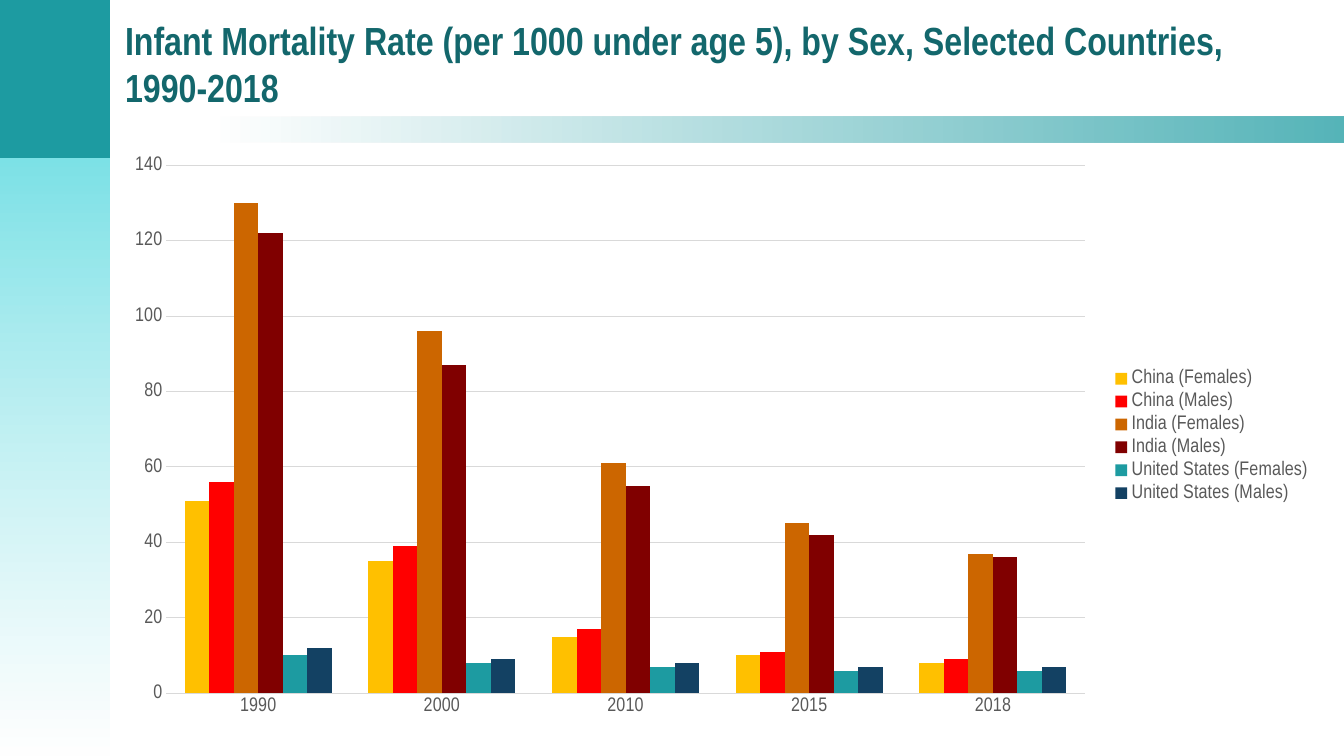
"""Build a slide comparing infant mortality by sex in three countries."""
from lxml.etree import SubElement
from pptx import Presentation
from pptx.chart.data import CategoryChartData
from pptx.dml.color import RGBColor
from pptx.enum.chart import XL_CHART_TYPE, XL_LEGEND_POSITION, XL_TICK_MARK
from pptx.enum.shapes import MSO_SHAPE
from pptx.enum.text import MSO_ANCHOR, MSO_AUTO_SIZE, PP_ALIGN
from pptx.oxml.ns import qn
from pptx.util import Pt

TITLE = "Infant Mortality Rate (per 1000 under age 5), by Sex, Selected Countries, 1990-2018"
YEARS = ["1990", "2000", "2010", "2015", "2018"]
RATES = [
    ("China (Females)", "gold", (51, 35, 15, 10, 8)),
    ("China (Males)", "red", (56, 39, 17, 11, 9)),
    ("India (Females)", "orange", (130, 96, 61, 45, 37)),
    ("India (Males)", "maroon", (122, 87, 55, 42, 36)),
    ("United States (Females)", "teal", (10, 8, 7, 6, 6)),
    ("United States (Males)", "navy", (12, 9, 8, 7, 7)),
]
COLORS = {
    "gold": "FFC000", "red": "FF0000", "orange": "CC6600", "maroon": "800000",
    "teal": "1D9BA1", "navy": "134163", "aqua": "7DE2E7", "white": "FFFFFF",
    "title": "13676C", "label": "595959", "grid": "D9D9D9",
}
BANDS = [
    ((-2, -1, 111, 158), [("teal", 100)], 0),
    ((-2, 157, 111, 593), [("aqua", 100), ("white", 75)], 270),
    ((209, 116, 1125, 25), [("white", 75), ("teal", 75)], 0),
]
TITLE_BOX = (114, 11, 1197, 104)
CHART_BOX = (110, 143, 1202, 579)
PX = 9144
FONT = "Arial Narrow"


def emu(box):
    return [side * PX for side in box]


def rgb(name):
    return RGBColor.from_string(COLORS[name])


def apply(item, **look):
    for key, value in look.items():
        setattr(item, key, value)


def style(font, size, color, bold=False):
    apply(font, name=FONT, size=Pt(size), bold=bold)
    font.color.rgb = rgb(color)


def rule(line):
    line.color.rgb = rgb("grid")
    line.width = Pt(0.75)


def add_band(slide, box, stops, angle):
    band = slide.shapes.add_shape(MSO_SHAPE.RECTANGLE, *emu(box))
    band.shadow.inherit = False
    band.line.fill.background()
    if len(stops) == 1:
        band.fill.solid()
        band.fill.fore_color.rgb = rgb(stops[0][0])
        return
    band.fill.gradient()
    band.fill.gradient_angle = angle
    for stop, (color, _) in zip(band.fill.gradient_stops, stops):
        stop.color.rgb = rgb(color)
    tints = band._element.spPr.iter(qn("a:srgbClr"))
    for tint, (_, alpha) in zip(tints, stops):
        if alpha < 100:
            SubElement(tint, qn("a:alpha")).set("val", str(alpha * 1000))


def add_title(slide):
    title = slide.shapes.title
    apply(title, **dict(zip(("left", "top", "width", "height"), emu(TITLE_BOX))))
    frame = title.text_frame
    frame.text = TITLE
    apply(frame, word_wrap=True, auto_size=MSO_AUTO_SIZE.NONE,
          vertical_anchor=MSO_ANCHOR.MIDDLE)
    para = frame.paragraphs[0]
    para.alignment = PP_ALIGN.LEFT
    style(para.runs[0].font, 28, "title", True)


def add_rates(slide):
    data = CategoryChartData()
    data.categories = YEARS
    for name, _, values in RATES:
        data.add_series(name, values)
    chart = slide.shapes.add_chart(
        XL_CHART_TYPE.COLUMN_CLUSTERED, *emu(CHART_BOX), data).chart
    chart.has_title = False
    style(chart.font, 14, "label")
    chart.has_legend = True
    apply(chart.legend, position=XL_LEGEND_POSITION.RIGHT, include_in_layout=False)
    style(chart.legend.font, 14, "label")
    plot = chart.plots[0]
    apply(plot, gap_width=150, overlap=0, vary_by_categories=False)
    for series, (_, color, _) in zip(plot.series, RATES):
        series.format.fill.solid()
        series.format.fill.fore_color.rgb = rgb(color)
    years, scale = chart.category_axis, chart.value_axis
    for axis in (years, scale):
        apply(axis, major_tick_mark=XL_TICK_MARK.NONE, minor_tick_mark=XL_TICK_MARK.NONE)
        style(axis.tick_labels.font, 14, "label")
    apply(scale, minimum_scale=0, maximum_scale=140, major_unit=20)
    scale.format.line.fill.background()
    rule(years.format.line)
    rule(scale.major_gridlines.format.line)


def main():
    deck = Presentation()
    apply(deck, slide_width=1333 * PX, slide_height=750 * PX)
    slide = deck.slides.add_slide(deck.slide_layouts[5])
    for band in BANDS:
        add_band(slide, *band)
    add_title(slide)
    add_rates(slide)
    deck.save("out.pptx")


if __name__ == "__main__":
    main()
